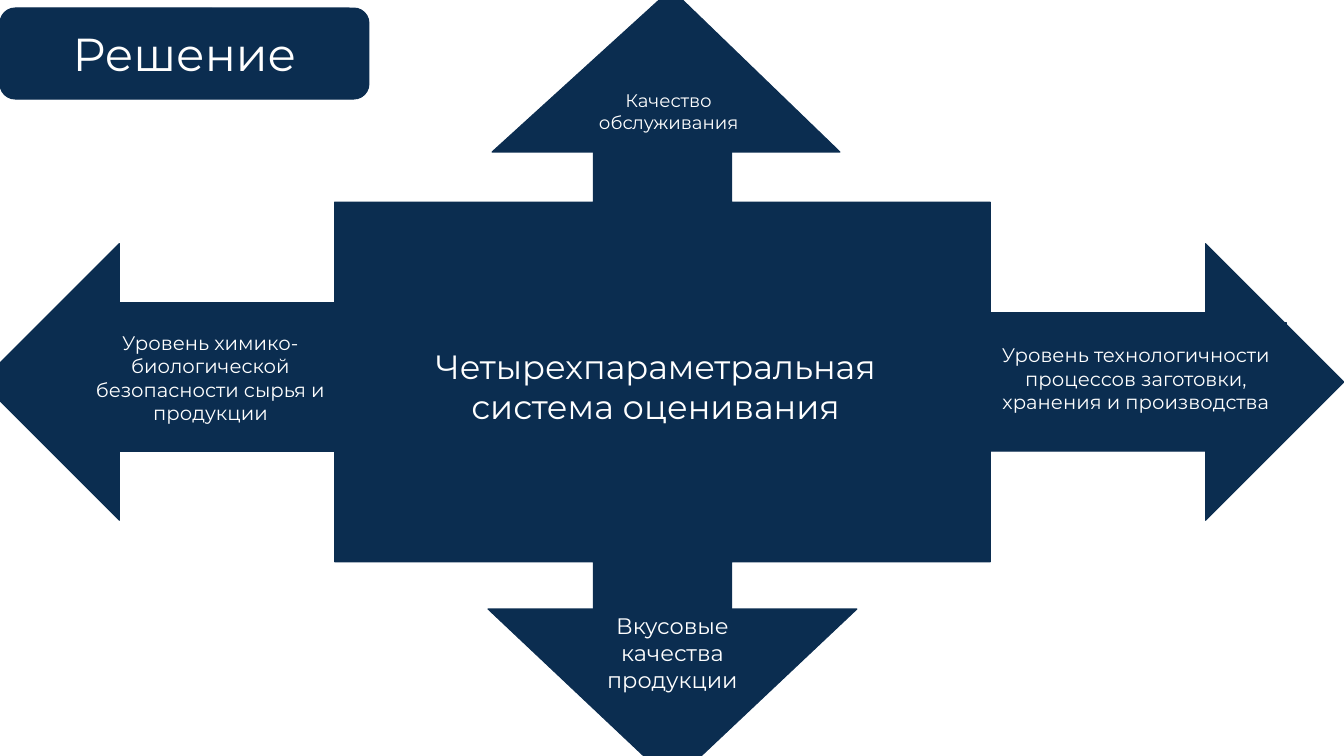
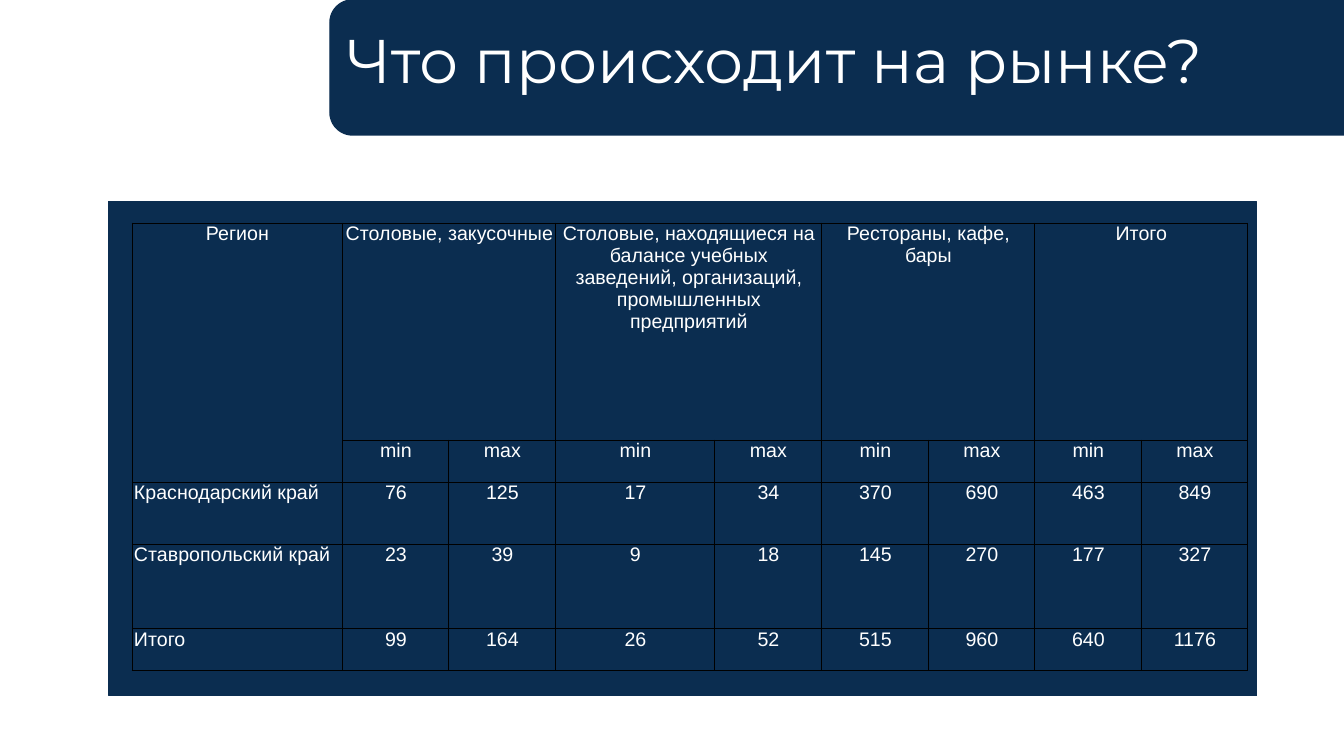
from lxml import etree
from pptx import Presentation
from pptx.dml.color import RGBColor
from pptx.enum.shapes import MSO_SHAPE as SHAPE
from pptx.enum.text import MSO_ANCHOR as ANCHOR, PP_ALIGN as ALIGN
from pptx.oxml import parse_xml
from pptx.util import Emu, Pt

W, H = 1344, 756
SCALE = 12192000 / W
COLORS = {"navy": "0B2D50", "text": "FFFFFF", "grid": "000000"}
TITLE_FONT, TABLE_FONT = "Montserrat", "Arial"
A_NS = "http://schemas.openxmlformats.org/drawingml/2006/main"


def px(n):
    return Emu(round(n * SCALE))


def color(name):
    return RGBColor.from_string(COLORS[name])


def style(p, font, size, align):
    p.alignment = align
    p.font.name, p.font.size = font, Pt(size)
    p.font.color.rgb = color("text")


def block(s, kind, box, text="", size=14, adj=(), align=ALIGN.CENTER,
          anchor=ANCHOR.MIDDLE, top=10, line=0.75):
    """Navy shape with optional white text."""
    sp = s.shapes.add_shape(kind, *map(px, box))
    sp.shadow.inherit = False
    sp.fill.solid()
    sp.fill.fore_color.rgb = color("navy")
    sp.line.color.rgb = color("navy")
    sp.line.width = Pt(line)
    for i, value in enumerate(adj):
        sp.adjustments[i] = value
    if text:
        tf = sp.text_frame
        tf.word_wrap = True
        tf.vertical_anchor = anchor
        tf.margin_left = tf.margin_right = tf.margin_bottom = px(10)
        tf.margin_top = px(top)
        tf.text = text
        style(tf.paragraphs[0], TITLE_FONT, size, align)
    return sp


def title(s, box, text, size, **options):
    return block(s, SHAPE.ROUNDED_RECTANGLE, box, text, size, (0.167,), **options)


def set_borders(cell):
    tcPr = cell._tc.get_or_add_tcPr()
    for side in "LRTB":
        tcPr.append(parse_xml(
            f'<a:ln{side} xmlns:a="{A_NS}" w="{Pt(0.75)}"><a:solidFill>'
            f'<a:srgbClr val="{COLORS["grid"]}"/></a:solidFill></a:ln{side}>'))


def arrows_diagram(s, x, y, w, h):
    # Four-way arrow
    block(s, SHAPE.QUAD_ARROW_CALLOUT, (x, y, w, h),
          adj=(0.185, 0.185, 0.185, 0.481))
    # Captions: shape, offset from the diagram's corner, text, size, adjustments
    captions = [
        (SHAPE.RECTANGLE, (423, 280, 503, 196),
         "Четырехпараметральная система оценивания", 24, ()),
        (SHAPE.ISOSCELES_TRIANGLE, (511, -19, 348, 163),
         "Качество обслуживания", 13, (0.515,)),
        (SHAPE.FLOWCHART_MERGE, (507, 601, 369, 174),
         "Вкусовые качества продукции", 16, ()),
        (SHAPE.RECTANGLE, (83, 295, 293, 149),
         "Уровень химико-биологической безопасности сырья и продукции", 14, ()),
        (SHAPE.RECTANGLE, (1004, 315, 302, 111),
         "Уровень технологичности процессов заготовки, хранения и производства",
         14, ()),
    ]
    for kind, (dx, dy, cw, ch), text, size, adj in captions:
        block(s, kind, (x + dx, y + dy, cw, ch), text, size, adj)


def market_table(s, x, y, w, h):
    block(s, SHAPE.RECTANGLE, (x, y, w, h))
    groups = ["Столовые, закусочные",
              "Столовые, находящиеся на балансе учебных заведений, "
              "организаций, промышленных предприятий",
              "Рестораны, кафе, бары", "Итого"]
    rows = [
        ["Регион"] + [t for g in groups for t in (g, "")],
        [""] + ["min", "max"] * len(groups),
        ["Краснодарский край", 76, 125, 17, 34, 370, 690, 463, 849],
        ["Ставропольский край", 23, 39, 9, 18, 145, 270, 177, 327],
        ["Итого", 99, 164, 26, 52, 515, 960, 640, 1176],
    ]
    widths = [211, 106, 107, 159, 107, 107, 106, 107, 106]
    heights = [217, 42, 62, 85, 42]
    frame = (x + 23, y + 21, sum(widths), sum(heights))
    table = s.shapes.add_table(len(rows), len(widths), *map(px, frame)).table
    table.first_row = table.horz_banding = False
    for col, width in zip(table.columns, widths):
        col.width = px(width)
    for row, height in zip(table.rows, heights):
        row.height = px(height)

    # Cells
    for r, values in enumerate(rows):
        for c, value in enumerate(values):
            cell = table.cell(r, c)
            cell.margin_left = cell.margin_right = px(2)
            cell.margin_top = cell.margin_bottom = 0
            set_borders(cell)
            cell.fill.background()
            cell.text = str(value)
            is_region = c == 0 and r > 1
            style(cell.text_frame.paragraphs[0], TABLE_FONT, 14,
                  ALIGN.JUSTIFY if is_region else ALIGN.CENTER)

    # Merged headings
    table.cell(0, 0).merge(table.cell(1, 0))
    for c in range(1, len(widths), 2):
        table.cell(0, c).merge(table.cell(0, c + 1))


def main():
    prs = Presentation()
    prs.slide_width, prs.slide_height = px(W), px(H)
    blank = prs.slide_layouts[6]

    # Solution
    s = prs.slides.add_slide(blank)
    arrows_diagram(s, -19, 8, 1363, 748)
    title(s, (0, 8, 369, 91), "Решение", 33)

    # Market
    s = prs.slides.add_slide(blank)
    title(s, (330, 0, 1049, 135), "Что происходит на рынке?", 44,
          align=ALIGN.LEFT, anchor=ANCHOR.TOP, top=15, line=1)
    market_table(s, 109, 202, 1148, 494)

    prs.save("out.pptx")


if __name__ == "__main__":
    main()
